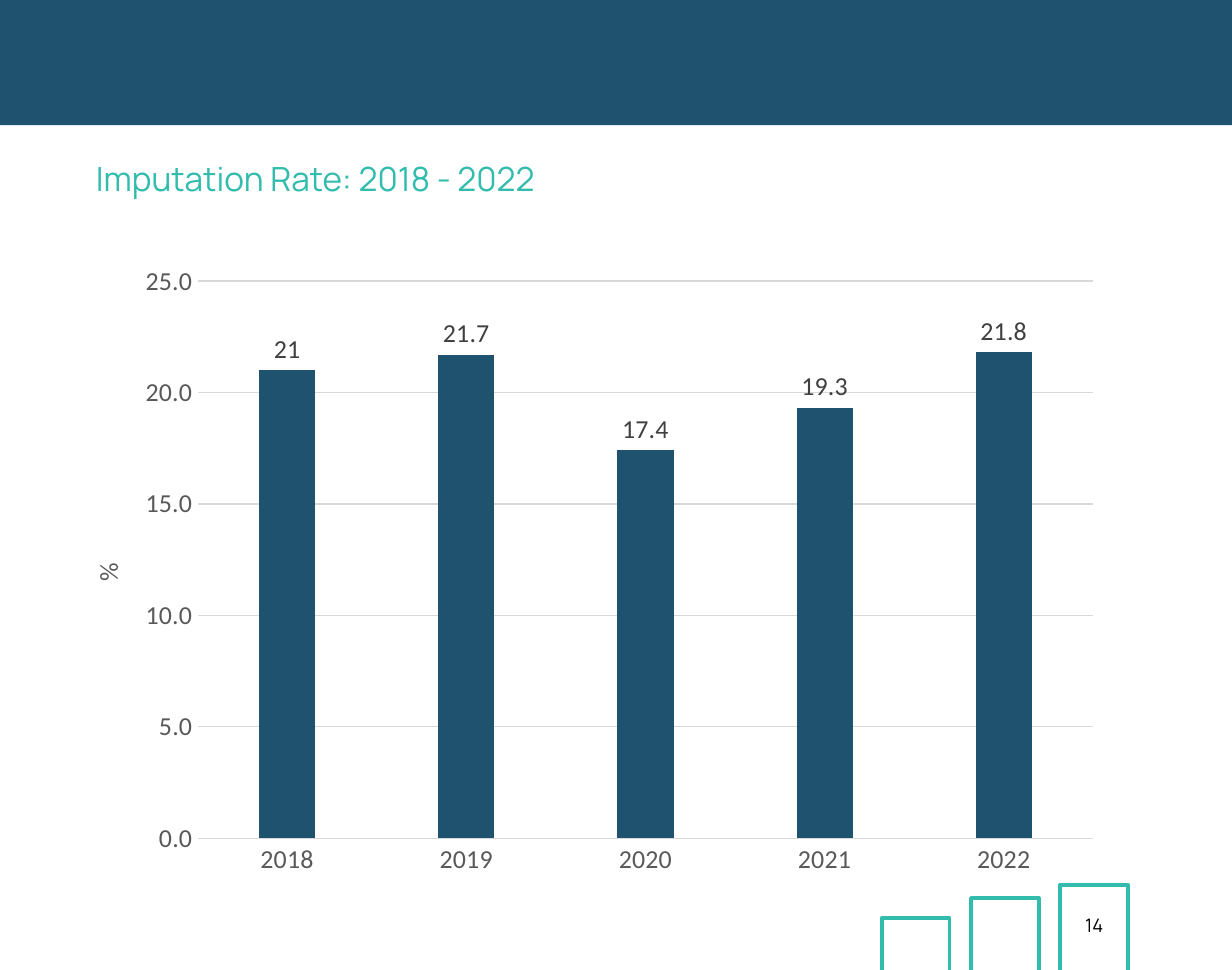
from dataclasses import dataclass

from lxml import etree
from pptx import Presentation
from pptx.chart.data import CategoryChartData
from pptx.dml.color import RGBColor
from pptx.enum.chart import XL_CHART_TYPE, XL_LABEL_POSITION, XL_TICK_MARK
from pptx.enum.shapes import MSO_SHAPE
from pptx.enum.text import PP_ALIGN
from pptx.oxml.ns import qn
from pptx.util import Inches, Pt

RECTANGLE = MSO_SHAPE.RECTANGLE
COLUMNS = XL_CHART_TYPE.COLUMN_CLUSTERED
NO_TICK = XL_TICK_MARK.NONE
LABEL_ABOVE = XL_LABEL_POSITION.OUTSIDE_END
LEFT, CENTER = PP_ALIGN.LEFT, PP_ALIGN.CENTER


@dataclass(frozen=True)
class Theme:
    navy: RGBColor = RGBColor.from_string("1E526E")
    teal: RGBColor = RGBColor.from_string("32BCAD")
    black: RGBColor = RGBColor.from_string("000000")
    axis_text: RGBColor = RGBColor.from_string("595959")
    label_text: RGBColor = RGBColor.from_string("404040")
    grid: RGBColor = RGBColor.from_string("D9D9D9")
    text_font: str = "Manrope"
    chart_font: str = "Calibri"
    title_size: Pt = Pt(18)
    chart_size: Pt = Pt(14)
    number_size: Pt = Pt(10)


THEME = Theme()
IMPUTATION_RATES = {"2018": 21, "2019": 21.7, "2020": 17.4, "2021": 19.3, "2022": 21.8}


def set_font(font, name, size, color):
    for attribute, value in {"name": name, "size": size, "bold": False}.items():
        setattr(font, attribute, value)
    font.color.rgb = color


def set_line(line, color, width):
    line.color.rgb = color
    line.width = Pt(width)


def add_rectangle(slide, left, top, width, height, fill=None, outline=None):
    shape = slide.shapes.add_shape(
        RECTANGLE, Inches(left), Inches(top), Inches(width), Inches(height))
    shape.shadow.inherit = False
    if fill is None:
        shape.fill.background()
    else:
        shape.fill.solid()
        shape.fill.fore_color.rgb = fill
    if outline is None:
        shape.line.fill.background()
    else:
        set_line(shape.line, outline, 2)


def add_text(slide, text, left, top, width, height, size, color, alignment=LEFT):
    box = slide.shapes.add_textbox(
        Inches(left), Inches(top), Inches(width), Inches(height))
    frame = box.text_frame
    frame.word_wrap = True
    for side in ("left", "top", "right", "bottom"):
        setattr(frame, f"margin_{side}", 0)
    paragraph = frame.paragraphs[0]
    paragraph.text = text
    paragraph.alignment = alignment
    set_font(paragraph.font, THEME.text_font, size, color)
    return paragraph


def set_layout(parent, index, **places):
    """Place a chart part by fractions of the chart's size."""
    for layout in parent.findall(qn("c:layout")):
        parent.remove(layout)
    layout = etree.Element(qn("c:layout"))
    manual = etree.SubElement(layout, qn("c:manualLayout"))
    if "w" in places:
        etree.SubElement(manual, qn("c:layoutTarget")).set("val", "inner")
    for axis in ("x", "y"):
        etree.SubElement(manual, qn(f"c:{axis}Mode")).set("val", "edge")
    for key, value in places.items():
        etree.SubElement(manual, qn(f"c:{key}")).set("val", str(value))
    parent.insert(index, layout)


def style_axes(chart):
    category_axis, value_axis = chart.category_axis, chart.value_axis
    for axis in (category_axis, value_axis):
        axis.major_tick_mark = axis.minor_tick_mark = NO_TICK
        set_font(axis.tick_labels.font, THEME.chart_font, THEME.chart_size, THEME.axis_text)
    set_line(category_axis.format.line, THEME.grid, 0.75)
    value_axis.format.line.fill.background()
    set_line(value_axis.major_gridlines.format.line, THEME.grid, 0.75)

    scale = {"minimum_scale": 0, "maximum_scale": 25, "major_unit": 5}
    for attribute, value in scale.items():
        setattr(value_axis, attribute, value)
    value_axis.tick_labels.number_format = "0.0"
    value_axis.tick_labels.number_format_is_linked = False

    paragraph = value_axis.axis_title.text_frame.paragraphs[0]
    run = paragraph.add_run()
    run.text = "%"
    set_font(run.font, THEME.chart_font, THEME.chart_size, THEME.axis_text)


def add_rate_chart(slide, rates):
    data = CategoryChartData()
    data.categories = list(rates)
    data.add_series("Series 1", list(rates.values()))
    chart = slide.shapes.add_chart(
        COLUMNS, Inches(0.4), Inches(1.89), Inches(7.97), Inches(4.78), data).chart
    chart.has_legend = chart.has_title = False
    set_font(chart.font, THEME.chart_font, THEME.chart_size, THEME.black)
    style_axes(chart)

    # Columns and their values
    plot = chart.plots[0]
    plot_format = {"gap_width": 219, "overlap": -27, "vary_by_categories": False,
                   "has_data_labels": True}
    for attribute, value in plot_format.items():
        setattr(plot, attribute, value)
    fill = plot.series[0].format.fill
    fill.solid()
    fill.fore_color.rgb = THEME.navy
    labels = plot.data_labels
    label_format = {"show_value": True, "position": LABEL_ABOVE,
                    "number_format": "General", "number_format_is_linked": False}
    for attribute, value in label_format.items():
        setattr(labels, attribute, value)
    set_font(labels.font, THEME.chart_font, THEME.chart_size, THEME.label_text)

    # Plot area and upright axis title
    plot_area = chart._chartSpace.find(".//" + qn("c:plotArea"))
    set_layout(plot_area, 0, x=0.136, y=0.046, w=0.844, h=0.875)
    axis_title = plot_area.find(".//" + qn("c:title"))
    set_layout(axis_title, 1, x=0.03, y=0.48)
    body = axis_title.find(".//" + qn("a:bodyPr"))
    for key, value in {"rot": "-5400000", "vert": "horz"}.items():
        body.set(key, value)


def main():
    presentation = Presentation()
    presentation.slide_width = Inches(9.25)
    presentation.slide_height = Inches(7.28)
    slide = presentation.slides.add_slide(presentation.slide_layouts[6])

    # Header band and rising footer bars
    add_rectangle(slide, -0.17, -0.11, 9.63, 1.05, fill=THEME.navy)
    for index, top in enumerate((6.89, 6.74, 6.64)):
        add_rectangle(slide, 6.62 + 0.67 * index, top, 0.51, 0.81, outline=THEME.teal)

    # Page number and title
    number = add_text(slide, "14", 7.96, 6.83, 0.51, 0.19,
                      THEME.number_size, THEME.black, CENTER)
    number.line_spacing = Pt(14.2)
    add_text(slide, "Imputation Rate: 2018 - 2022", 0.72, 1.19, 3.91, 0.3,
             THEME.title_size, THEME.teal)

    add_rate_chart(slide, IMPUTATION_RATES)
    presentation.save("out.pptx")


if __name__ == "__main__":
    main()
